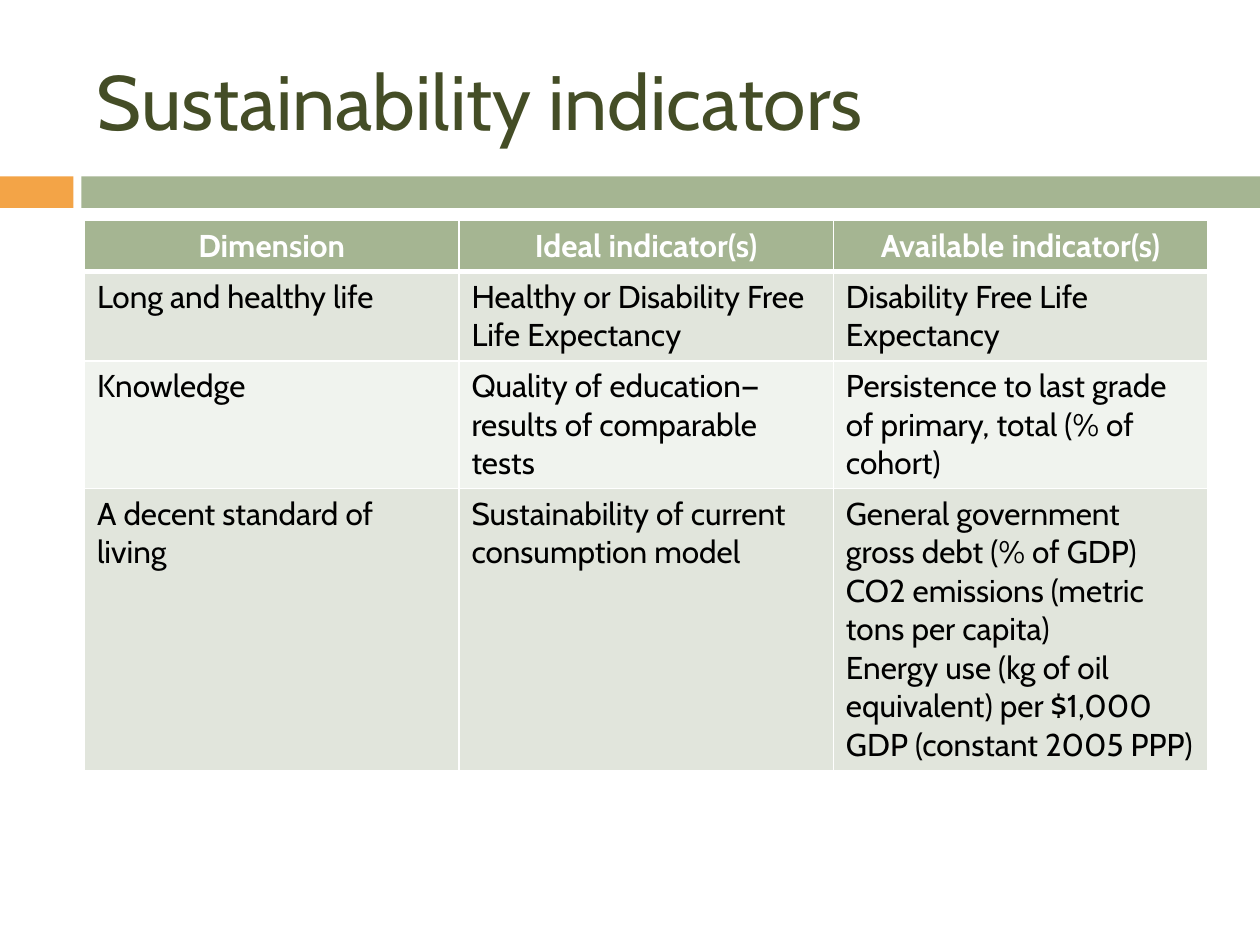
from dataclasses import dataclass

from lxml.etree import SubElement
from pptx import Presentation
from pptx.dml.color import RGBColor
from pptx.enum.shapes import MSO_SHAPE
from pptx.enum.text import MSO_ANCHOR, PP_ALIGN
from pptx.oxml.ns import qn
from pptx.util import Pt

WHITE = RGBColor(0xFF, 0xFF, 0xFF)
BLACK = RGBColor(0x00, 0x00, 0x00)
ORANGE = RGBColor(0xF3, 0xA4, 0x47)
SAGE = RGBColor(0xA5, 0xB5, 0x92)
OLIVE = RGBColor(0x44, 0x4D, 0x26)
BAND_DARK = RGBColor(0xE1, 0xE5, 0xDC)
BAND_LIGHT = RGBColor(0xF0, 0xF3, 0xEE)

FONT = "Cabin"
TITLE_FORMAT = {"name": FONT, "size": Pt(44), "bold": False}
HEADER_FORMAT = {"name": FONT, "size": Pt(18), "bold": True}
BODY_FORMAT = {"name": FONT, "size": Pt(18), "bold": False}

TABLE_LEFT, TABLE_TOP, TABLE_WIDTH = 48.24, 126, 642
ROW_HEIGHTS = (29.2, 51, 73, 161)


@dataclass(frozen=True)
class Bar:
    left: float
    width: float
    color: RGBColor


BARS = (Bar(0, 42, ORANGE), Bar(46.5, 673.5, SAGE))

# A line break within a cell starts a new paragraph
ROWS = (
    ("Dimension", "Ideal indicator(s)", "Available indicator(s)"),
    (
        "Long and healthy life",
        "Healthy or Disability Free Life Expectancy",
        "Disability Free Life Expectancy",
    ),
    (
        "Knowledge",
        "Quality of education—results of comparable tests",
        "Persistence to last grade of primary, total (% of cohort)",
    ),
    (
        "A decent standard of living",
        "Sustainability of current consumption model",
        "General government gross debt (% of GDP)\n"
        "CO2 emissions (metric tons per capita)\n"
        "Energy use (kg of oil equivalent) per $1,000 GDP (constant 2005 PPP)",
    ),
)


def write_text(text_frame, text: str, font_format: dict, color: RGBColor,
               alignment=PP_ALIGN.LEFT) -> None:
    text_frame.text = text
    for paragraph in text_frame.paragraphs:
        paragraph.alignment = alignment
        for run in paragraph.runs:
            for attribute, value in font_format.items():
                setattr(run.font, attribute, value)
            run.font.color.rgb = color


def draw_bar(slide, bar: Bar) -> None:
    shape = slide.shapes.add_shape(
        MSO_SHAPE.RECTANGLE, Pt(bar.left), Pt(100.8), Pt(bar.width), Pt(18))
    shape.shadow.inherit = False
    shape.fill.solid()
    shape.fill.fore_color.rgb = bar.color
    shape.line.fill.background()


def draw_title(slide, text: str) -> None:
    box = slide.shapes.add_textbox(Pt(48.24), Pt(18), Pt(642), Pt(78))
    box.text_frame.word_wrap = True
    box.text_frame.vertical_anchor = MSO_ANCHOR.MIDDLE
    write_text(box.text_frame, text, TITLE_FORMAT, OLIVE)


def set_borders(cell, bottom_width: float, top_width: float) -> None:
    properties = cell._tc.get_or_add_tcPr()
    widths = {"a:lnL": 1, "a:lnR": 1, "a:lnT": top_width, "a:lnB": bottom_width}
    for position, (tag, width) in enumerate(widths.items()):
        line = SubElement(properties, qn(tag), w=str(Pt(width)))
        fill = SubElement(line, qn("a:solidFill"))
        SubElement(fill, qn("a:srgbClr"), val=str(WHITE))
        properties.insert(position, line)


def draw_table(slide, rows: tuple) -> None:
    column_count = len(rows[0])
    table = slide.shapes.add_table(
        len(rows), column_count, Pt(TABLE_LEFT), Pt(TABLE_TOP),
        Pt(TABLE_WIDTH), Pt(sum(ROW_HEIGHTS))).table
    for column in table.columns:
        column.width = Pt(TABLE_WIDTH / column_count)
    for row_index, texts in enumerate(rows):
        table.rows[row_index].height = Pt(ROW_HEIGHTS[row_index])
        is_header = row_index == 0
        band = BAND_DARK if row_index % 2 else BAND_LIGHT
        for column_index, text in enumerate(texts):
            cell = table.cell(row_index, column_index)
            cell.fill.solid()
            cell.fill.fore_color.rgb = SAGE if is_header else band
            set_borders(cell, bottom_width=3 if is_header else 1,
                        top_width=3 if row_index == 1 else 1)
            if is_header:
                write_text(cell.text_frame, text, HEADER_FORMAT, WHITE,
                           PP_ALIGN.CENTER)
            else:
                write_text(cell.text_frame, text, BODY_FORMAT, BLACK)


def main() -> None:
    presentation = Presentation()
    presentation.slide_width, presentation.slide_height = Pt(720), Pt(540)
    slide = presentation.slides.add_slide(presentation.slide_layouts[6])

    # Divider bars below the title
    for bar in BARS:
        draw_bar(slide, bar)

    # Title and indicator table
    draw_title(slide, "Sustainability indicators")
    draw_table(slide, ROWS)

    presentation.save("out.pptx")


if __name__ == "__main__":
    main()
